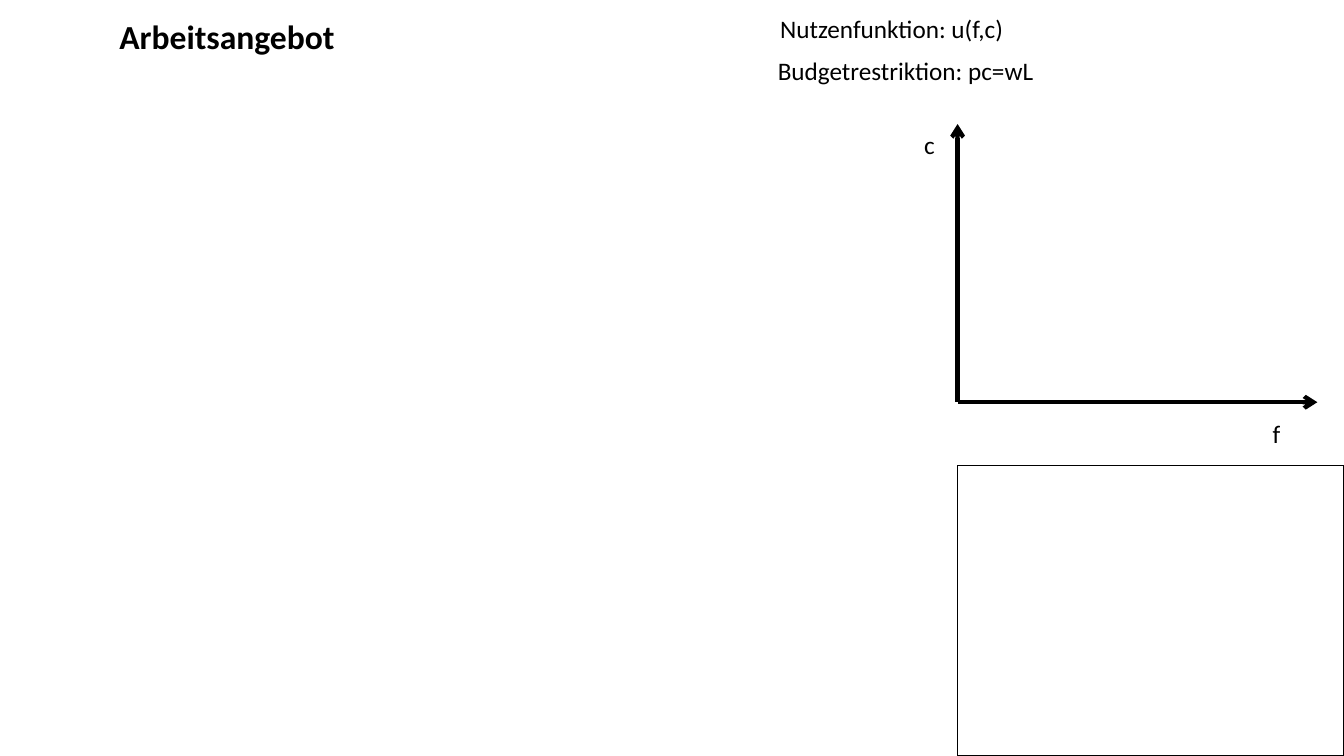
from lxml.etree import SubElement
from pptx import Presentation
from pptx.dml.color import RGBColor
from pptx.enum.shapes import MSO_CONNECTOR as Connector, MSO_SHAPE as Shape
from pptx.enum.text import MSO_AUTO_SIZE as AutoSize
from pptx.oxml.ns import qn
from pptx.util import Pt

WIDTH, HEIGHT = 960, 540


def color(hex_string):
    return RGBColor.from_string(hex_string)


class Board:
    font = "Calibri"
    ink = "000000"

    def __init__(self, slide):
        self.shapes = slide.shapes

    def text(self, words, left, top, width, height=28.8, size=18, bold=False, wrap=False):
        box = self.shapes.add_textbox(Pt(left), Pt(top), Pt(width), Pt(height))
        frame = box.text_frame
        frame.word_wrap = wrap
        frame.auto_size = AutoSize.SHAPE_TO_FIT_TEXT
        run = frame.paragraphs[0].add_run()
        run.text = words
        run.font.name = self.font
        run.font.size = Pt(size)
        run.font.bold = bold
        run.font.color.rgb = color(self.ink)

    def frame(self, left, top, width, height):
        box = self.shapes.add_shape(Shape.RECTANGLE, Pt(left), Pt(top), Pt(width), Pt(height))
        box.shadow.inherit = False
        box.fill.background()
        box.line.color.rgb = color(self.ink)
        box.line.width = Pt(1)

    def arrow(self, start, end):
        axis = self.shapes.add_connector(Connector.STRAIGHT, *map(Pt, start + end))
        axis.line.color.rgb = color(self.ink)
        axis.line.width = Pt(3)
        SubElement(axis.line._get_or_add_ln(), qn("a:tailEnd"), type="arrow")
        SubElement(axis._element.spPr, qn("a:effectLst"))


def main():
    deck = Presentation()
    deck.slide_width, deck.slide_height = Pt(WIDTH), Pt(HEIGHT)
    board = Board(deck.slides.add_slide(deck.slide_layouts[6]))

    # Empty frame in the lower right corner
    origin_x, origin_y = 684, 287.3
    frame_top = 332.6
    board.frame(origin_x, frame_top, WIDTH - origin_x, HEIGHT - frame_top)

    # Title
    board.text("Arbeitsangebot", 78.2, 8, 168.5, 36, size=24, bold=True)

    # Axes: leisure f and consumption c
    origin = (origin_x, origin_y)
    board.arrow(origin, (941, origin_y))
    board.arrow(origin, (origin_x, 88.6))
    board.text("c", 653, 88.6, 62.6, wrap=True)
    board.text("f", 902, 295.2, 20.2)

    # Model equations
    board.text("Budgetrestriktion: pc=wL", 548.5, 36.2, 199.4)
    board.text("Nutzenfunktion: u(f,c)", 550.2, 6, 175.7)

    deck.save("out.pptx")


if __name__ == "__main__":
    main()
